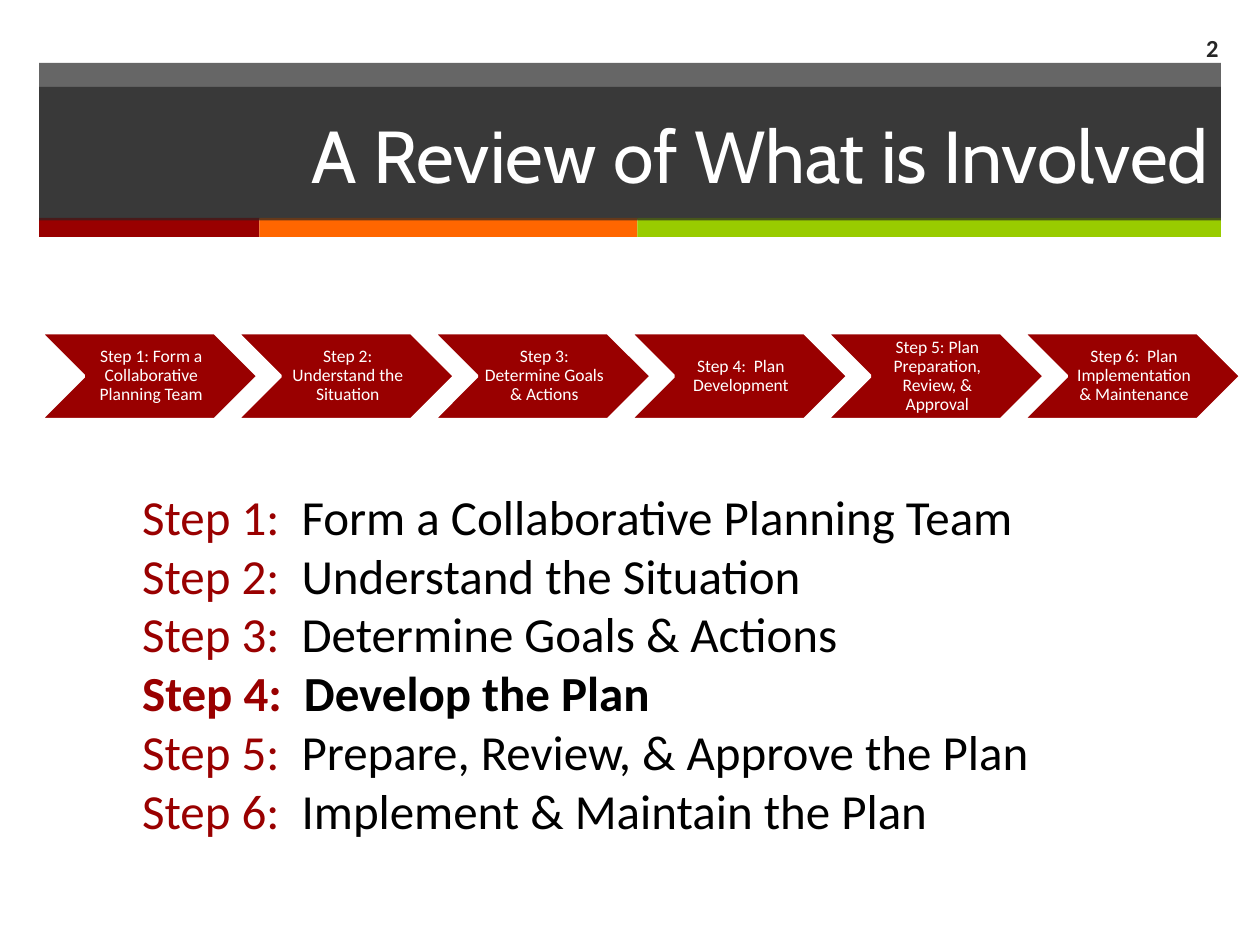
from lxml import etree
from pptx import Presentation
from pptx.dml.color import RGBColor
from pptx.enum.shapes import MSO_SHAPE
from pptx.enum.text import MSO_ANCHOR, PP_ALIGN
from pptx.oxml.ns import qn
from pptx.util import Inches, Pt

RECTANGLE, CHEVRON = MSO_SHAPE.RECTANGLE, MSO_SHAPE.CHEVRON
TOP, MIDDLE = MSO_ANCHOR.TOP, MSO_ANCHOR.MIDDLE
LEFT, CENTER, RIGHT = PP_ALIGN.LEFT, PP_ALIGN.CENTER, PP_ALIGN.RIGHT

RED, ORANGE, GREEN = "990000", "FF6600", "99CC00"
CHARCOAL, WHITE, BLACK = "262626", "FFFFFF", "000000"

STRIPES = [(1.75, RED), (3, ORANGE), (4.63, GREEN)]
PROCESS = [
    "Step 1: Form a Collaborative Planning Team",
    "Step 2: Understand the Situation",
    "Step 3: Determine Goals & Actions",
    "Step 4:  Plan Development",
    "Step 5: Plan Preparation, Review, & Approval",
    "Step 6:  Plan Implementation & Maintenance",
]
SUMMARY = [
    "Form a Collaborative Planning Team",
    "Understand the Situation",
    "Determine Goals & Actions",
    "Develop the Plan",
    "Prepare, Review, & Approve the Plan",
    "Implement & Maintain the Plan",
]
CURRENT_STEP = 4


def color(value):
    return RGBColor.from_string(value)


class ReviewSlide:
    """Draws the elements of the planning review in one style."""

    body_font = "Calibri"
    title_font = "Cabin"

    def __init__(self, slide):
        self.slide = slide

    def style_run(self, run, size, fill, bold=False, font=body_font):
        run.font.name = font
        run.font.size = Pt(size)
        run.font.bold = bold
        run.font.color.rgb = color(fill)

    def shape(self, kind, left, top, width, height, fill, opacity=None):
        shape = self.slide.shapes.add_shape(
            kind, Inches(left), Inches(top), Inches(width), Inches(height))
        shape.shadow.inherit = False
        shape.fill.solid()
        shape.fill.fore_color.rgb = color(fill)
        shape.line.fill.background()
        if opacity:
            tint = shape.element.spPr.find(".//" + qn("a:srgbClr"))
            etree.SubElement(tint, qn("a:alpha"), val=str(opacity * 1000))
        return shape

    def text_box(self, left, top, width, height, anchor):
        box = self.slide.shapes.add_textbox(
            Inches(left), Inches(top), Inches(width), Inches(height))
        box.text_frame.word_wrap = True
        box.text_frame.vertical_anchor = anchor
        return box.text_frame

    def label(self, frame, text, align, size, fill, **style):
        frame.text = text
        line = frame.paragraphs[0]
        line.alignment = align
        self.style_run(line.runs[0], size, fill, **style)
        return line

    def title(self, text):
        self.shape(RECTANGLE, 0.31, 0.5, 9.38, 1.24, CHARCOAL, 70)
        left = 0.31
        for width, fill in STRIPES:
            self.shape(RECTANGLE, left, 1.73, width, 0.15, fill)
            left += width
        band = self.shape(RECTANGLE, 0.31, 0.69, 9.38, 1.06, CHARCOAL, 70)
        band.text_frame.word_wrap = True
        band.text_frame.vertical_anchor = MIDDLE
        self.label(band.text_frame, text, RIGHT, 42, WHITE, font=self.title_font)

    def process(self, steps):
        for index, text in enumerate(steps):
            step = self.shape(CHEVRON, 0.32 + 1.56 * index, 2.64, 1.73, 0.69, RED)
            step.line.color.rgb = color(WHITE)
            step.line.width = Pt(2)
            frame = step.text_frame
            frame.word_wrap = True
            frame.vertical_anchor = MIDDLE
            frame.margin_left = Inches(0.04)
            frame.margin_top = frame.margin_right = frame.margin_bottom = Inches(0.01)
            self.label(frame, text, CENTER, 10, WHITE).line_spacing = 0.9

    def summary(self, steps):
        frame = self.text_box(1.03, 3.81, 8.3, 2.93, TOP)
        for number, step in enumerate(steps, 1):
            line = frame.paragraphs[0] if number == 1 else frame.add_paragraph()
            line.alignment = LEFT
            for text, fill in ((f"Step {number}:  ", RED), (step, BLACK)):
                run = line.add_run()
                run.text = text
                self.style_run(run, 28, fill, bold=number == CURRENT_STEP)

    def page_number(self, number):
        frame = self.text_box(9.08, 0.18, 0.69, 0.39, MIDDLE)
        self.label(frame, str(number), RIGHT, 14, CHARCOAL, bold=True)


def main():
    deck = Presentation()
    deck.slide_width, deck.slide_height = Inches(10), Inches(7.5)
    review = ReviewSlide(deck.slides.add_slide(deck.slide_layouts[6]))
    review.title("A Review of What is Involved")
    review.process(PROCESS)
    review.summary(SUMMARY)
    review.page_number(2)
    deck.save("out.pptx")


if __name__ == "__main__":
    main()
